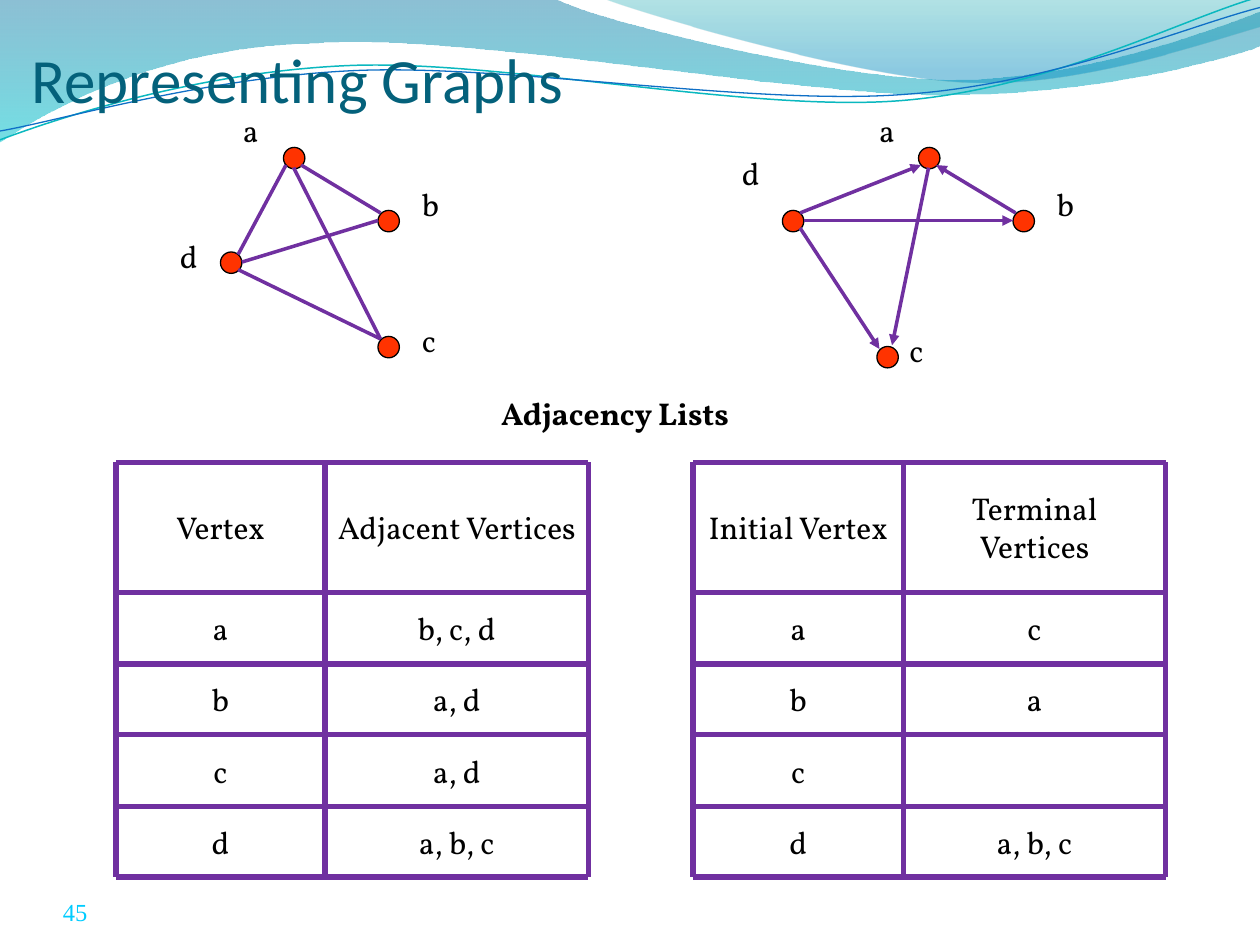
from math import cos, radians, sin

from lxml.etree import SubElement
from pptx import Presentation
from pptx.dml.color import RGBColor
from pptx.enum.shapes import MSO_CONNECTOR, MSO_SHAPE
from pptx.enum.text import MSO_ANCHOR, PP_ALIGN
from pptx.oxml.ns import qn
from pptx.util import Inches, Pt

PURPLE = "7030A0"
BODY = {"name": "Vollkorn", "size": Pt(18), "color": "000000", "bold": False}


def rgb(code):
    return RGBColor.from_string(code)


def write(frame, text, style, **layout):
    """Put styled text in a text frame."""
    for key, value in layout.items():
        setattr(frame, key, value)
    para = frame.paragraphs[0]
    run = para.add_run()
    run.text = text
    for key, value in style.items():
        if key == "color":
            run.font.color.rgb = rgb(value)
        else:
            setattr(run.font, key, value)
    return para


deck = Presentation()
deck.slide_width, deck.slide_height = Inches(10), Inches(7.5)
slide = deck.slides.add_slide(deck.slide_layouts[6])
shapes = slide.shapes

# Waves at the top: a point (2 numbers) is a line, 6 numbers are a curve
waves = [
    {"path": [(0, 0), (4.4, -0.01), (4.76, 0.17, 6.64, 0.63, 7.58, 0.63),
              (8.53, 0.63, 9.58, 0.26, 10, 0.09), (10.01, 0.36),
              (9.83, 0.44, 8.7, 0.76, 7.46, 0.75),
              (6.22, 0.75, 3.82, 0.28, 2.57, 0.34),
              (1.29, 0.36, 0.46, 0.83, -0.01, 1.13), (0, 0)],
     "stops": [(0, "0074A1", 45), (1, "00C6CF", 55)]},
    {"path": [(4.79, -0.01), (5.09, 0.11, 6.82, 0.62, 7.69, 0.65),
              (8.56, 0.69, 9.61, 0.32, 10, 0.21), (10, 0), (4.79, -0.01)],
     "stops": [(0, "00A1A9", 30), (0.8, "008BBF", 45)]},
    {"path": [(0, 1.11), (0.48, 0.93, 1.58, 0.57, 2.77, 0.52),
              (3.95, 0.47, 5.93, 0.89, 7.13, 0.8),
              (8.33, 0.71, 9.38, 0.15, 9.98, -0.02)],
     "line": ("0AB8BF", 0.85), "mid": (4.99, 0.57), "turn": -2.7},
    {"path": [(0, 1.04), (0.47, 0.96, 1.64, 0.61, 2.83, 0.56),
              (4.03, 0.51, 5.97, 0.84, 7.17, 0.75),
              (8.36, 0.67, 9.41, 0.21, 10, 0.06)],
     "line": ("0F6FC6", 0.75), "mid": (5, 0.59), "turn": -2.7},
]
for wave in waves:
    # Lay the points out level; the shape's rotation turns them back
    midx, midy = wave.get("mid", (0, 0))
    turn = wave.get("turn", 0)
    c, s = cos(radians(-turn)), sin(radians(-turn))
    dots = []
    for part in wave["path"]:
        for x, y in zip(part[::2], part[1::2]):
            x, y = x - midx, y - midy
            dots.append((Inches(midx + x * c - y * s), Inches(midy + x * s + y * c)))
    pen = shapes.build_freeform(*dots[0])
    pen.add_line_segments(dots[1:], close="stops" in wave)
    shape = pen.convert_to_shape()
    shape.shadow.inherit = False
    shape.rotation = turn
    # Join each three line steps of a curve into one Bezier step
    lines = iter(list(shape.element.iter(qn("a:lnTo"))))
    for part in wave["path"][1:]:
        first = next(lines)
        if len(part) == 6:
            first.tag = qn("a:cubicBezTo")
            for extra in (next(lines), next(lines)):
                first.append(extra[0])
                extra.getparent().remove(extra)
    if "stops" in wave:
        shape.line.fill.background()
        shape.fill.gradient()
        shape.fill.gradient_angle = 270
        for stop, (place, color, alpha) in zip(shape.fill.gradient_stops, wave["stops"]):
            stop.position = place
            stop.color.rgb = rgb(color)
        tones = shape.element.spPr.iter(qn("a:srgbClr"))
        for tone, (place, color, alpha) in zip(tones, wave["stops"]):
            SubElement(tone, qn("a:alpha"), val=str(alpha * 1000))
    else:
        color, width = wave["line"]
        shape.fill.background()
        shape.line.color.rgb = rgb(color)
        shape.line.width = Pt(width)

# Page number, title and heading
BARE = {"margin_left": 0, "margin_right": 0, "margin_bottom": 0,
        "vertical_anchor": MSO_ANCHOR.BOTTOM}
texts = [
    ("45", (0.5, 6.95, 2.33, 0.4), {"margin_top": 0, **BARE},
     {"name": "Times New Roman", "size": Pt(14), "color": "00CCFF"}),
    ("Representing Graphs", (0.25, 0, 9.42, 0.92), BARE,
     {"name": "Calibri", "size": Pt(36), "color": "04617B"}),
    ("Adjacency Lists", (3.88, 3.08, 3.2, 0.57), {}, {**BODY, "bold": True}),
]

# Graphs: corner of each vertex and of its label, edges between sites
graphs = [
    {"nodes": {"a": (2.25, 1.17, 1.83, 0.83), "b": (3, 1.67, 3.25, 1.42),
               "c": (3, 2.67, 3.25, 2.5), "d": (1.75, 2, 1.33, 1.83)},
     "edges": ["b nw a se", "d ne a sw", "a s c nw", "d e b w", "d se c nw"],
     "arrow": False},
    {"nodes": {"a": (7.29, 1.17, 6.88, 0.83), "b": (8.04, 1.67, 8.29, 1.42),
               "c": (6.96, 2.75, 7.12, 2.58), "d": (6.21, 1.67, 5.79, 1.17)},
     "edges": ["b nw a se", "d ne a sw", "a s c nne", "d e b w", "d se c nw"],
     "arrow": True},
]
sites = {"nw": (0.02, 0.02), "ne": (0.14, 0.02), "sw": (0.02, 0.14),
         "se": (0.14, 0.14), "s": (0.08, 0.16), "e": (0.17, 0.08),
         "w": (0, 0.08), "nne": (0.12, -0.01)}
for graph in graphs:
    nodes = graph["nodes"]
    for name, (x, y, left, top) in nodes.items():
        dot = shapes.add_shape(MSO_SHAPE.FLOWCHART_CONNECTOR,
                               *map(Inches, (x, y, 0.17, 0.17)))
        dot.shadow.inherit = False
        dot.fill.solid()
        dot.fill.fore_color.rgb = rgb("FF3300")
        dot.line.color.rgb = rgb("000000")
        dot.line.width = Pt(0.75)
        texts.append((name, (left, top, 0.67, 0.57), {}, BODY))
    for edge in graph["edges"]:
        start, out, end, into = edge.split()
        ends = [nodes[node][axis] + sites[site][axis]
                for node, site in ((start, out), (end, into)) for axis in (0, 1)]
        line = shapes.add_connector(MSO_CONNECTOR.STRAIGHT, *map(Inches, ends))
        line.line.color.rgb = rgb(PURPLE)
        line.line.width = Pt(2)
        if graph["arrow"]:
            SubElement(line.line._get_or_add_ln(), qn("a:tailEnd"), type="triangle")
        SubElement(line.element.spPr, qn("a:effectLst"))

for text, box, layout, style in texts:
    frame = shapes.add_textbox(*map(Inches, box)).text_frame
    write(frame, text, style, word_wrap=True, **layout)

# Adjacency lists: boxes for the cells, then the thick rules
lists = [
    ((0.92, 2.58, 4.67), [("Vertex", "Adjacent Vertices"), ("a", "b, c, d"),
                          ("b", "a, d"), ("c", "a, d"), ("d", "a, b, c")]),
    ((5.5, 7.17, 9.25), [("Initial Vertex", "Terminal Vertices"), ("a", "c"),
                         ("b", "a"), ("c", ""), ("d", "a, b, c")]),
]
tops = [3.67, 4.7, 5.27, 5.83, 6.4, 6.96]
for cols, rows in lists:
    for top, foot, words in zip(tops, tops[1:], rows):
        for left, right, text in zip(cols, cols[1:], words):
            cell = shapes.add_shape(MSO_SHAPE.RECTANGLE, *map(
                Inches, (left, top, right - left, foot - top)))
            cell.shadow.inherit = False
            cell.fill.background()
            cell.line.color.rgb = rgb(PURPLE)
            cell.line.width = Pt(0.75)
            if text:
                para = write(cell.text_frame, text, BODY, word_wrap=True,
                             vertical_anchor=MSO_ANCHOR.MIDDLE)
                para.alignment = PP_ALIGN.CENTER
                para.space_before = Pt(3.6)
    rules = [(cols[0], y, cols[-1], y) for y in tops]
    rules += [(x, tops[0], x, tops[-1]) for x in cols]
    for ends in rules:
        rule = shapes.add_connector(MSO_CONNECTOR.STRAIGHT, *map(Inches, ends))
        rule.line.color.rgb = rgb(PURPLE)
        rule.line.width = Pt(3)
        SubElement(rule.element.spPr, qn("a:effectLst"))

deck.save("out.pptx")
